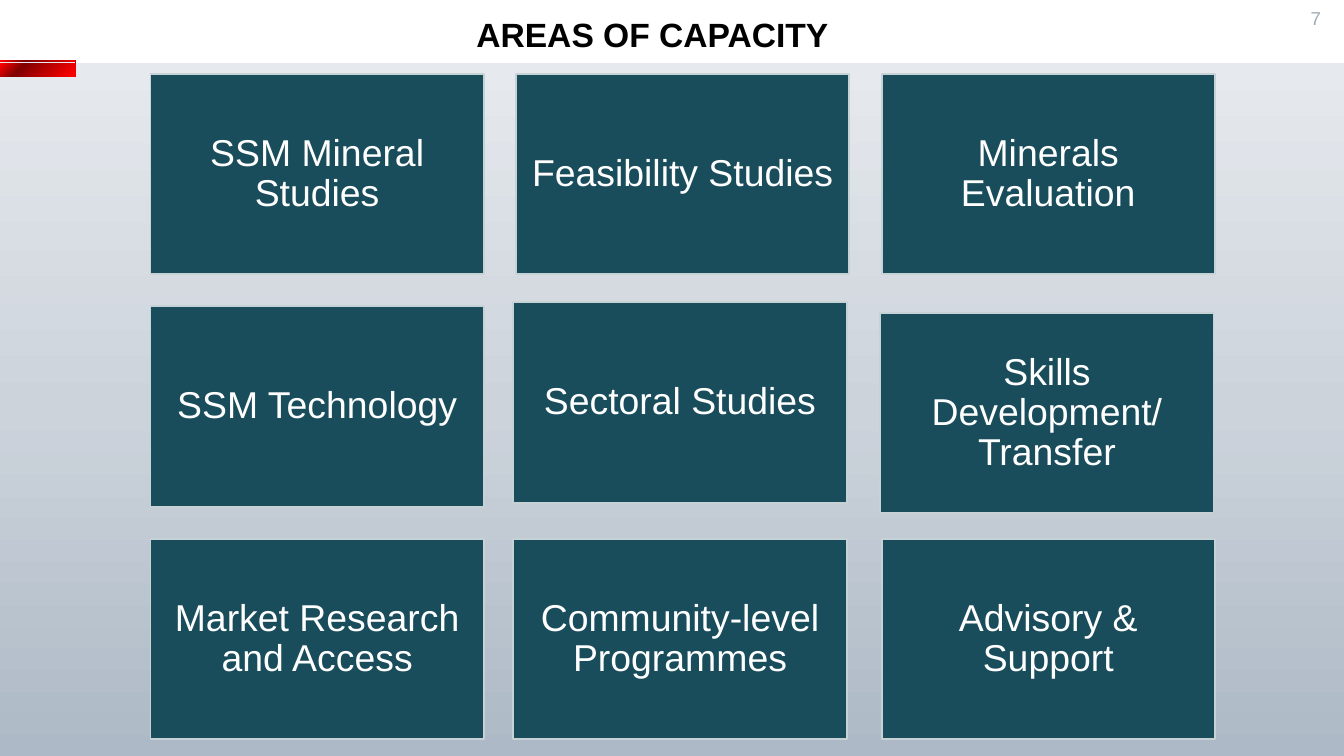
import pptx
import pptx.dml.color
import pptx.enum.shapes
import pptx.enum.text
import pptx.oxml
import pptx.oxml.ns
import pptx.util
from pptx.util import Inches

COLORS = {
    "tile": "194D5C",
    "tile_line": "C6D2D6",
    "tile_text": "FFFFFF",
    "title": "000000",
    "number": "A3ADB7",
}
PANEL_STOPS = [(0, "ADB9C6"), (50, "CCD3DB"), (100, "E6E9ED")]
ACCENT_STOPS = [(3, "FF0000"), (37, "C00000"), (71, "800000"), (98, "FF0000")]
UPWARD = '<a:lin ang="16200000" scaled="0"/>'
FROM_CORNER = '<a:path path="circle"><a:fillToRect l="100000" t="100000"/></a:path>'

TILE_WIDTH, TILE_HEIGHT = 2.48, 1.49
COLUMN_STEP, ROW_STEP = 2.72, 1.73
AREAS = [
    ["SSM Mineral Studies", "Feasibility Studies", "Minerals Evaluation"],
    ["SSM Technology", "Sectoral Studies", "Skills Development/ Transfer"],
    ["Market Research and Access", "Community-level Programmes", "Advisory & Support"],
]
# Small shifts of single tiles off the grid, by (row, column)
SHIFTS = {(1, 1): (-0.02, -0.03), (1, 2): (-0.01, 0.05), (2, 1): (-0.02, 0)}


def rgb(name):
    return pptx.dml.color.RGBColor.from_string(COLORS[name])


def add_rectangle(slide, left, top, width, height):
    shape = slide.shapes.add_shape(
        pptx.enum.shapes.MSO_SHAPE.RECTANGLE,
        Inches(left), Inches(top), Inches(width), Inches(height))
    shape.shadow.inherit = False
    return shape


def write_text(shape, text, size, color, anchor, inset, bold=False):
    frame = shape.text_frame
    frame.text = text
    frame.word_wrap = True
    frame.auto_size = pptx.enum.text.MSO_AUTO_SIZE.NONE
    frame.vertical_anchor = anchor
    frame.margin_left = frame.margin_right = Inches(inset)
    frame.margin_top = frame.margin_bottom = Inches(inset)
    paragraph = frame.paragraphs[0]
    paragraph.alignment = pptx.enum.text.PP_ALIGN.CENTER
    font = paragraph.runs[0].font
    font.name = "Arial"
    font.size = pptx.util.Pt(size)
    font.bold = bold
    font.color.rgb = rgb(color)
    return paragraph


def add_gradient_bar(slide, left, top, width, height, stops, direction):
    shape = add_rectangle(slide, left, top, width, height)
    shape.line.fill.background()
    shape.fill.gradient()
    stop_xml = "".join(
        f'<a:gs pos="{position * 1000}"><a:srgbClr val="{color}"/></a:gs>'
        for position, color in stops)
    gradient = pptx.oxml.parse_xml(
        f'<a:gradFill {pptx.oxml.ns.nsdecls("a")} rotWithShape="1">'
        f"<a:gsLst>{stop_xml}</a:gsLst>{direction}</a:gradFill>")
    properties = shape.element.spPr
    properties.replace(properties.find(pptx.oxml.ns.qn("a:gradFill")), gradient)


def add_backdrop(slide, left, top, width, height):
    """Shaded panel with a red tab and a thin red line on its top left corner."""
    tab = (0.56, 0.1)
    add_gradient_bar(slide, left, top - 0.02, *tab, ACCENT_STOPS, FROM_CORNER)
    add_gradient_bar(slide, left, top, width, height, PANEL_STOPS, UPWARD)
    add_gradient_bar(slide, left, top - 0.01, *tab, PANEL_STOPS, UPWARD)
    add_gradient_bar(slide, left, top, *tab, ACCENT_STOPS, FROM_CORNER)


def add_header(slide, left, top, width, height):
    """Title across the box, with the page number at its right end."""
    number_width = 0.42
    title = slide.shapes.title
    title.left, title.top = Inches(left), Inches(top)
    title.width, title.height = Inches(width - number_width), Inches(height)
    write_text(title, "AREAS OF CAPACITY", 18, "title",
               pptx.enum.text.MSO_ANCHOR.TOP, 0.1, bold=True)
    number = slide.shapes.add_textbox(
        Inches(left + width - number_width), Inches(top),
        Inches(number_width), Inches(0.27))
    write_text(number, "7", 10, "number", pptx.enum.text.MSO_ANCHOR.MIDDLE, 0.05)


def add_tile(slide, left, top, text):
    tile = add_rectangle(slide, left, top, TILE_WIDTH, TILE_HEIGHT)
    tile.fill.solid()
    tile.fill.fore_color.rgb = rgb("tile")
    tile.line.color.rgb = rgb("tile_line")
    tile.line.width = pptx.util.Pt(1)
    paragraph = write_text(tile, text, 20, "tile_text",
                           pptx.enum.text.MSO_ANCHOR.MIDDLE, 0.08)
    paragraph.line_spacing = 0.9


def add_tile_grid(slide, left, top):
    for row, names in enumerate(AREAS):
        for column, name in enumerate(names):
            shift_x, shift_y = SHIFTS.get((row, column), (0, 0))
            add_tile(slide, left + column * COLUMN_STEP + shift_x,
                     top + row * ROW_STEP + shift_y, name)


def main():
    presentation = pptx.Presentation()
    presentation.slide_width = Inches(10)
    presentation.slide_height = presentation.slide_width * 9 // 16
    slide = presentation.slides.add_slide(presentation.slide_layouts[5])
    add_backdrop(slide, 0, 0.47, 10, 5.16)
    add_header(slide, 0.13, 0, 9.87, 0.44)
    add_tile_grid(slide, 1.12, 0.55)
    presentation.save("out.pptx")


if __name__ == "__main__":
    main()
